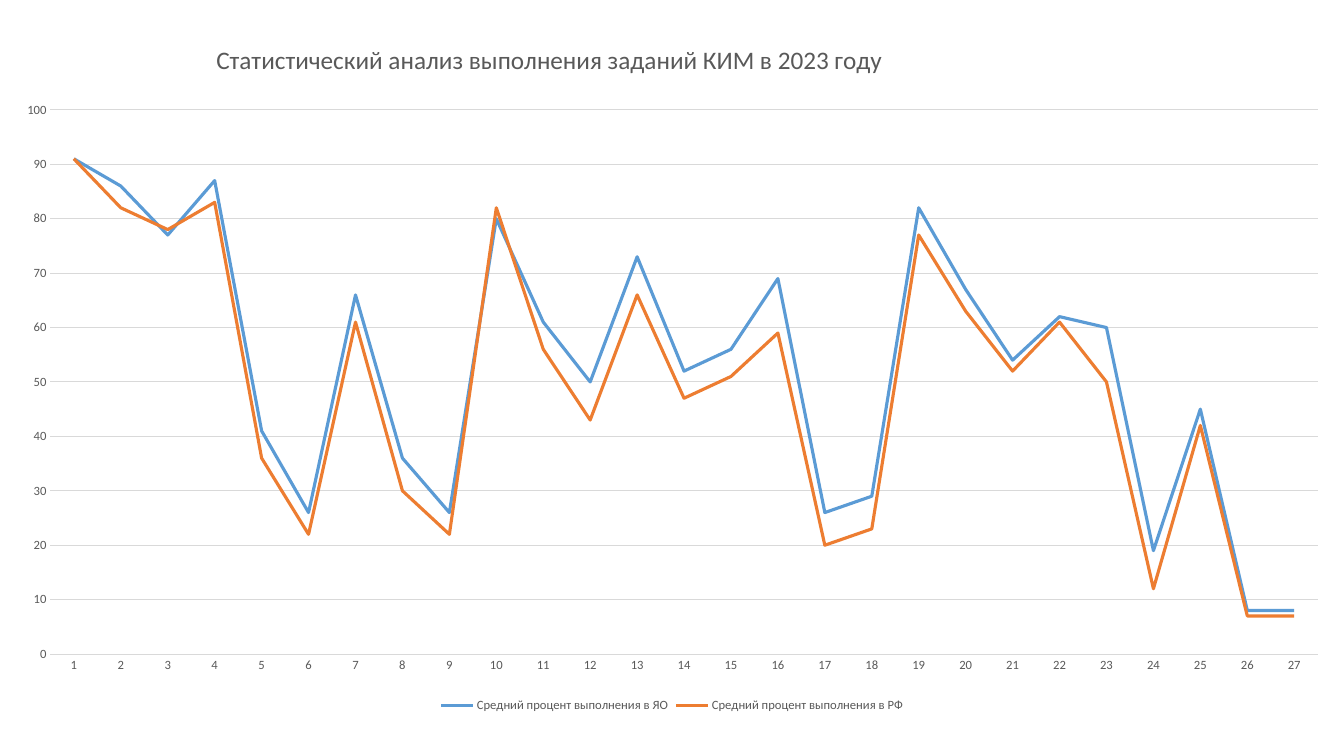
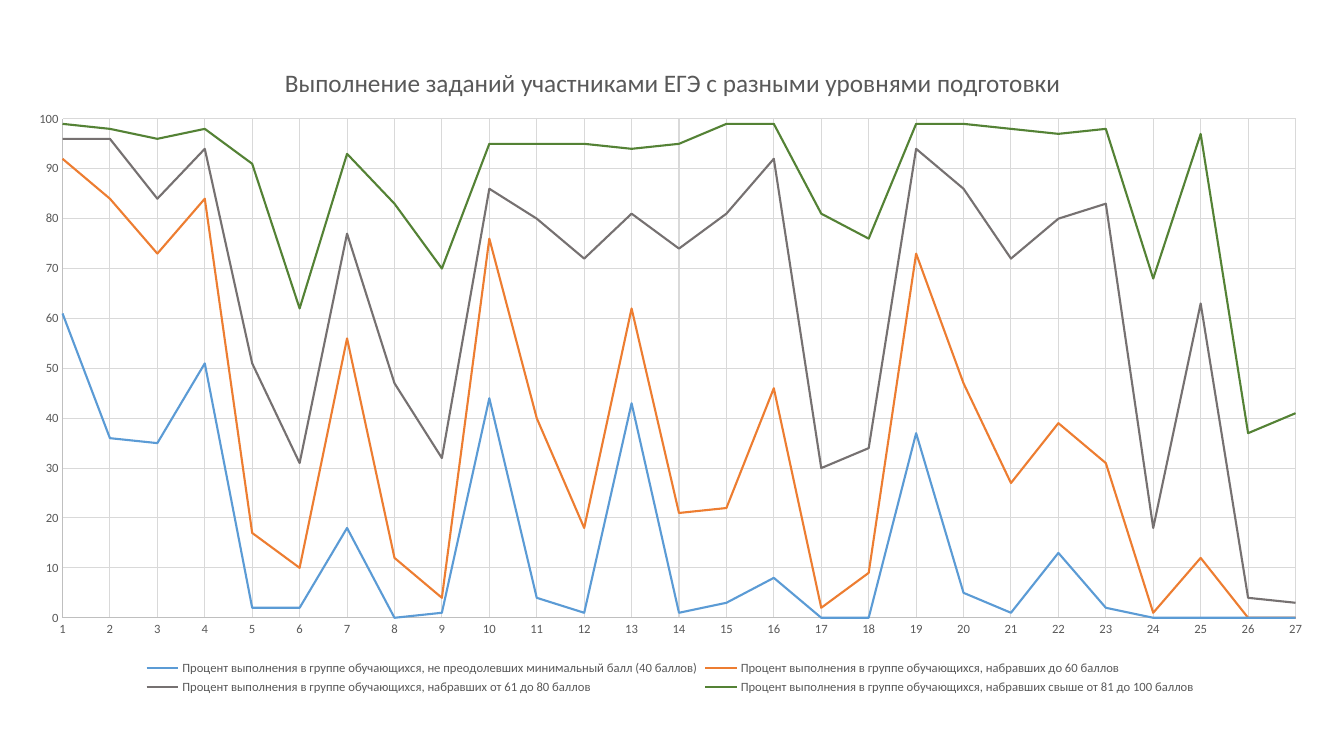
from lxml.etree import SubElement
from pptx import Presentation
from pptx.chart.data import CategoryChartData, XyChartData
from pptx.dml.color import RGBColor
from pptx.enum.chart import XL_CHART_TYPE as ChartType
from pptx.enum.chart import XL_LEGEND_POSITION as LegendPos
from pptx.enum.chart import XL_TICK_MARK as Tick
from pptx.oxml.ns import qn
from pptx.util import Inches, Pt

FONT, TEXT, GRID, AXIS = "Calibri", "595959", "D9D9D9", "BFBFBF"
BLUE, ORANGE, GRAY, GREEN = "5B9BD5", "ED7D31", "767171", "548235"
TASKS = range(1, 28)

# Boxes are left, top, width, height in inches on the slide.
SLIDES = [
    {
        "title": "Статистический анализ выполнения заданий КИМ в 2023 году",
        "scatter": False,
        "box": (0, 0.29, 13.33, 6.82),
        "title_at": (2.1, 0.37),
        "plot": (0.5, 1.09, 12.57, 5.4),
        "line_width": 2.25,
        "series": [
            ("Средний процент выполнения в ЯО", BLUE,
             [91, 86, 77, 87, 41, 26, 66, 36, 26, 80, 61, 50, 73, 52,
              56, 69, 26, 29, 82, 67, 54, 62, 60, 19, 45, 8, 8]),
            ("Средний процент выполнения в РФ", ORANGE,
             [91, 82, 78, 83, 36, 22, 61, 30, 22, 82, 56, 43, 66, 47,
              51, 59, 20, 23, 77, 63, 52, 61, 50, 12, 42, 7, 7]),
        ],
    },
    {
        "title": "Выполнение заданий участниками ЕГЭ с разными уровнями подготовки",
        "scatter": True,
        "box": (0.12, 0.33, 13.05, 6.6),
        "title_at": (2.78, 0.6),
        "plot": (0.62, 1.18, 12.23, 4.95),
        "line_width": 1.5,
        "series": [
            ("Процент выполнения в группе обучающихся, не преодолевших "
             "минимальный балл (40 баллов)", BLUE,
             [61, 36, 35, 51, 2, 2, 18, 0, 1, 44, 4, 1, 43, 1,
              3, 8, 0, 0, 37, 5, 1, 13, 2, 0, 0, 0, 0]),
            ("Процент выполнения в группе обучающихся, набравших до 60 баллов",
             ORANGE,
             [92, 84, 73, 84, 17, 10, 56, 12, 4, 76, 40, 18, 62, 21,
              22, 46, 2, 9, 73, 47, 27, 39, 31, 1, 12, 0, 0]),
            ("Процент выполнения в группе обучающихся, набравших от 61 до 80 баллов",
             GRAY,
             [96, 96, 84, 94, 51, 31, 77, 47, 32, 86, 80, 72, 81, 74,
              81, 92, 30, 34, 94, 86, 72, 80, 83, 18, 63, 4, 3]),
            ("Процент выполнения в группе обучающихся, набравших свыше "
             "от 81 до 100 баллов", GREEN,
             [99, 98, 96, 98, 91, 62, 93, 83, 70, 95, 95, 95, 94, 95,
              99, 99, 81, 76, 99, 99, 98, 97, 98, 68, 97, 37, 41]),
        ],
    },
]


def rgb(color):
    return RGBColor.from_string(color)


def set_attrs(obj, **values):
    for name, value in values.items():
        setattr(obj, name, value)


def style_font(font, size):
    set_attrs(font, name=FONT, size=Pt(size), bold=False)
    font.color.rgb = rgb(TEXT)


def style_line(line, color, width=0.75):
    line.color.rgb = rgb(color)
    line.width = Pt(width)


def place(parent, index, box, frame, target=None):
    """Fix a chart part at box, given in slide inches; frame is the chart's box."""
    for old in parent.findall(qn("c:layout")):
        parent.remove(old)
    layout = SubElement(parent, qn("c:layout"))
    parent.insert(index, layout)
    manual = SubElement(layout, qn("c:manualLayout"))
    values = {"layoutTarget": target} if target else {}
    values |= {"xMode": "edge", "yMode": "edge"}
    left, top, width, height = frame
    values["x"] = (box[0] - left) / width
    values["y"] = (box[1] - top) / height
    if len(box) == 4:
        values |= {"w": box[2] / width, "h": box[3] / height}
    for tag, value in values.items():
        SubElement(manual, qn("c:" + tag)).set("val", str(value))


def chart_data(spec):
    if not spec["scatter"]:
        data = CategoryChartData()
        data.categories = [str(task) for task in TASKS]
        for name, _, values in spec["series"]:
            data.add_series(name, values)
        return data
    data = XyChartData()
    for name, _, values in spec["series"]:
        series = data.add_series(name)
        for point in zip(TASKS, values):
            series.add_data_point(*point)
    return data


def style_axes(chart, scatter):
    x_axis, y_axis = chart.category_axis, chart.value_axis
    for axis in (x_axis, y_axis):
        set_attrs(axis, major_tick_mark=Tick.NONE, minor_tick_mark=Tick.NONE,
                  has_major_gridlines=scatter or axis is y_axis)
        style_font(axis.tick_labels.font, 9)
        style_line(axis.format.line, AXIS if scatter else GRID)
        if axis.has_major_gridlines:
            style_line(axis.major_gridlines.format.line, GRID)
    set_attrs(y_axis, minimum_scale=0, maximum_scale=100, major_unit=10)
    if scatter:
        set_attrs(x_axis, minimum_scale=TASKS[0], maximum_scale=TASKS[-1],
                  major_unit=1)
    else:
        y_axis.format.line.fill.background()


def add_line_chart(slide, spec):
    kind = (ChartType.XY_SCATTER_LINES_NO_MARKERS if spec["scatter"]
            else ChartType.LINE)
    frame = spec["box"]
    chart = slide.shapes.add_chart(
        kind, *map(Inches, frame), chart_data(spec)).chart
    style_font(chart.font, 10)

    title = chart.chart_title
    p = title.text_frame.paragraphs[0]
    r = p.add_run()
    r.text = spec["title"]
    style_font(r.font, 18)
    place(title.element, 1, spec["title_at"], frame)
    place(chart.element.chart.plotArea, 0, spec["plot"], frame, "inner")

    chart.has_legend = True
    set_attrs(chart.legend, position=LegendPos.BOTTOM, include_in_layout=False)
    style_font(chart.legend.font, 9)
    style_axes(chart, spec["scatter"])

    plot = chart.plots[0]
    plot.vary_by_categories = False
    for series, (_, color, _) in zip(plot.series, spec["series"]):
        style_line(series.format.line, color, spec["line_width"])
        if not spec["scatter"]:
            series.smooth = False


def main():
    prs = Presentation()
    set_attrs(prs, slide_width=Inches(13.33), slide_height=Inches(7.5))
    for spec in SLIDES:
        add_line_chart(prs.slides.add_slide(prs.slide_layouts[6]), spec)
    prs.save("out.pptx")


if __name__ == "__main__":
    main()
